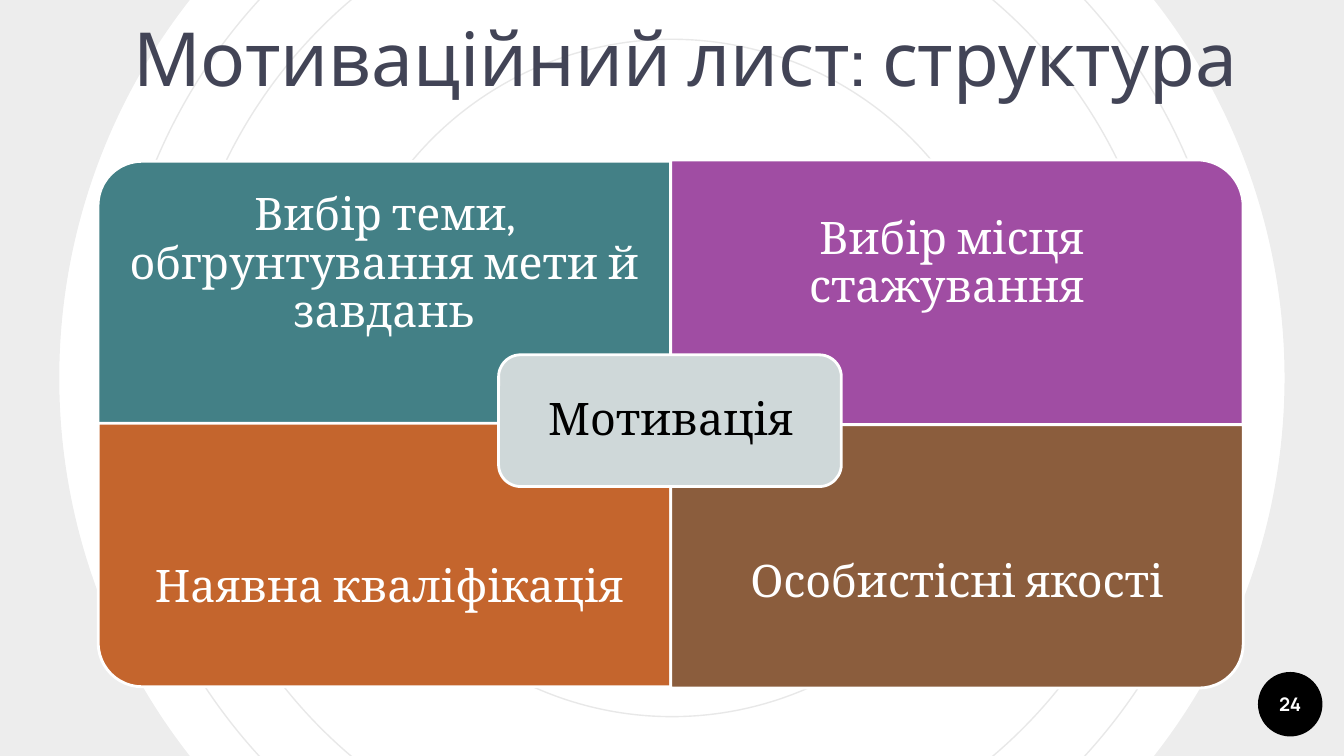
from dataclasses import dataclass
from lxml.etree import SubElement
from pptx import Presentation
from pptx.dml.color import RGBColor as RGB
from pptx.enum.shapes import MSO_SHAPE as Shape
from pptx.enum.text import MSO_ANCHOR as Anchor, PP_ALIGN as Align
from pptx.oxml.ns import qn
from pptx.util import Inches, Pt


@dataclass(frozen=True)
class Theme:
    white: str = "FFFFFF"
    black: str = "000000"
    ring: str = "E8E8E8"
    title: str = "424456"
    hub: str = "CFD8D9"
    head: tuple = ("Cabin", 40)
    body: tuple = ("Cambria", 24)
    page: tuple = ("Manrope", 10)


T = Theme()
WIDE = 10
HIGH = WIDE * 9 / 16

# Panel box, turn, fill, text box, text
PANELS = [
    ((0.73, 1.2, 4.26, 1.96), 270, "438086", (0.73, 1.27, 4.26, 1.4),
     "Вибір теми, обгрунтування мети й завдань"),
    ((4.99, 1.19, 4.26, 2.06), 0, "A04DA3", (4.99, 1.19, 4.18, 1.55),
     "Вибір місця стажування "),
    ((0.73, 3.15, 4.26, 1.96), 180, "C4652D", (0.8, 3.64, 4.19, 1.47),
     "Наявна кваліфікація"),
    ((4.99, 3.16, 4.26, 1.96), 90, "8B5D3D", (4.99, 3.64, 4.26, 1.4),
     "Особистісні якості"),
]


def units(box):
    return [Inches(n) for n in box]


def add_form(shapes, kind, box, fill=None, line=None, width=1.5, turn=0):
    """Add a preset shape that covers box once it has been turned."""
    x, y, w, h = box
    if turn % 180:
        x, y, w, h = x + (w - h) / 2, y + (h - w) / 2, h, w
    form = shapes.add_shape(kind, *units((x, y, w, h)))
    form.shadow.inherit = False
    form.rotation = turn
    if fill:
        form.fill.solid()
        form.fill.fore_color.rgb = RGB.from_string(fill)
    else:
        form.fill.background()
    if line:
        form.line.color.rgb = RGB.from_string(line)
        form.line.width = Pt(width)
    else:
        form.line.fill.background()
    return form


def set_text(frame, text, face, color, inset=None, bold=False):
    frame.word_wrap = True
    frame.vertical_anchor = Anchor.MIDDLE
    if inset is not None:
        frame.margin_left = frame.margin_right = Inches(inset)
        frame.margin_top = frame.margin_bottom = Inches(inset)
    frame.text = text
    para = frame.paragraphs[0]
    para.alignment = Align.CENTER
    para.font.name, size = face
    para.font.size = Pt(size)
    para.font.bold = bold
    para.font.color.rgb = RGB.from_string(color)
    return para


def add_label(shapes, box, text, color, inset):
    label = shapes.add_textbox(*units(box))
    para = set_text(label.text_frame, text, T.body, color, inset)
    para.line_spacing = 0.9
    para.space_after = Pt(0.35 * T.body[1])


def add_rings(shapes):
    def around(size):
        return (WIDE - size) / 2, (HIGH - size) / 2, size, size

    for size in (8.33, 7.38, 5.04):
        add_form(shapes, Shape.OVAL, around(size), line=T.ring, width=0.75)
    rim = add_form(shapes, Shape.DONUT, around(11.54), T.black)
    rim.adjustments[0] = 0.105
    tint = rim.fill._xPr.find(qn("a:solidFill"))[0]
    SubElement(tint, qn("a:alpha")).set("val", "7000")


def add_matrix(shapes):
    for box, turn, fill, spot, text in PANELS:
        add_form(shapes, Shape.ROUND_1_RECTANGLE, box, fill, T.white, turn=turn)
        add_label(shapes, spot, text, T.white, 0.19)
    add_form(shapes, Shape.ROUNDED_RECTANGLE, (3.71, 2.64, 2.55, 0.98),
             T.hub, T.white)
    add_label(shapes, (3.76, 2.69, 2.46, 0.88), "Мотивація", T.black, 0.1)


def add_title(slide, text):
    title = slide.shapes.title
    title.left, title.top, title.width, title.height = units((0.6, -0.16, 9, 1.17))
    set_text(title.text_frame, text, T.head, T.title)


def add_page(shapes, text):
    dot = add_form(shapes, Shape.OVAL, (9.36, 5, 0.48, 0.48), T.black)
    set_text(dot.text_frame, text, T.page, T.white, 0, bold=True)


def main():
    deck = Presentation()
    deck.slide_width, deck.slide_height = Inches(WIDE), Inches(HIGH)
    slide = deck.slides.add_slide(deck.slide_layouts[5])
    slide.background.fill.solid()
    slide.background.fill.fore_color.rgb = RGB.from_string(T.white)

    # Backdrop and page number
    add_rings(slide.shapes)
    add_page(slide.shapes, "24")

    # Title, raised above the backdrop
    add_title(slide, "Мотиваційний лист: структура")
    slide.shapes._spTree.append(slide.shapes.title._element)

    # Four panels around the hub
    add_matrix(slide.shapes.add_group_shape().shapes)
    deck.save("out.pptx")


if __name__ == "__main__":
    main()
